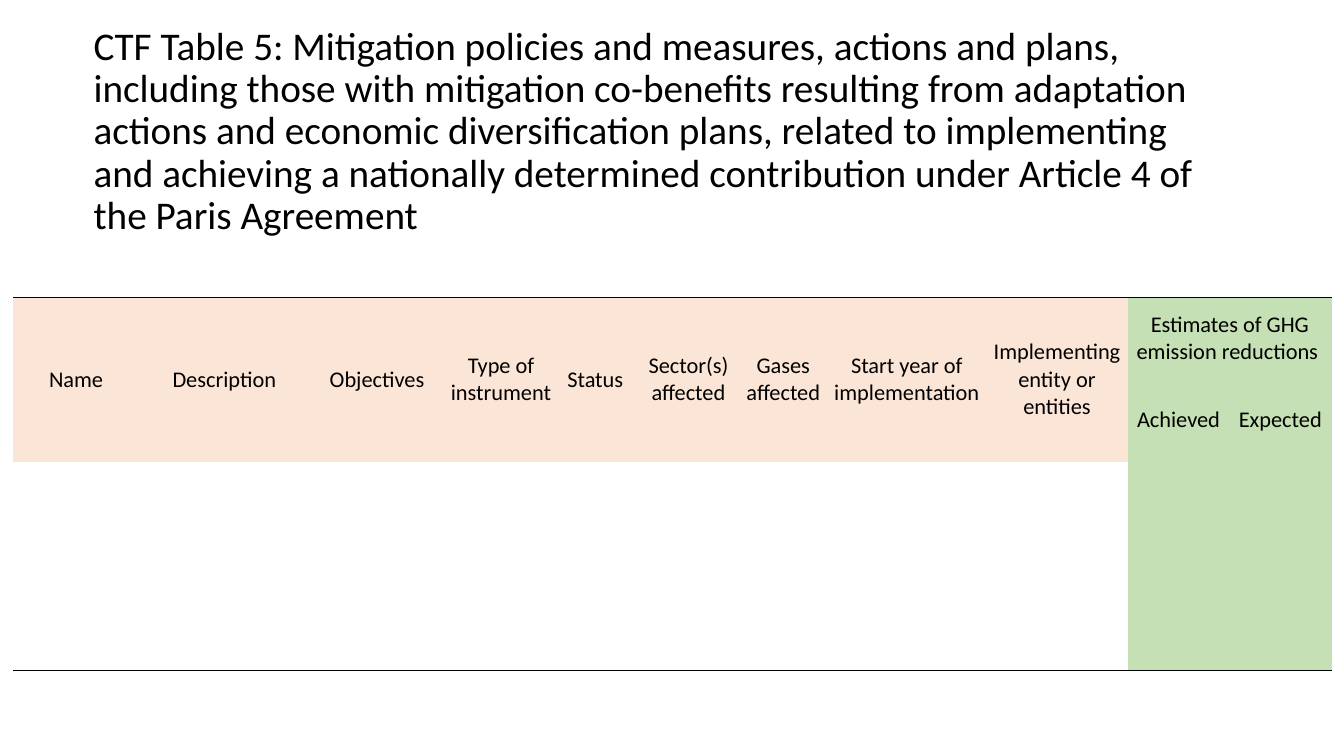
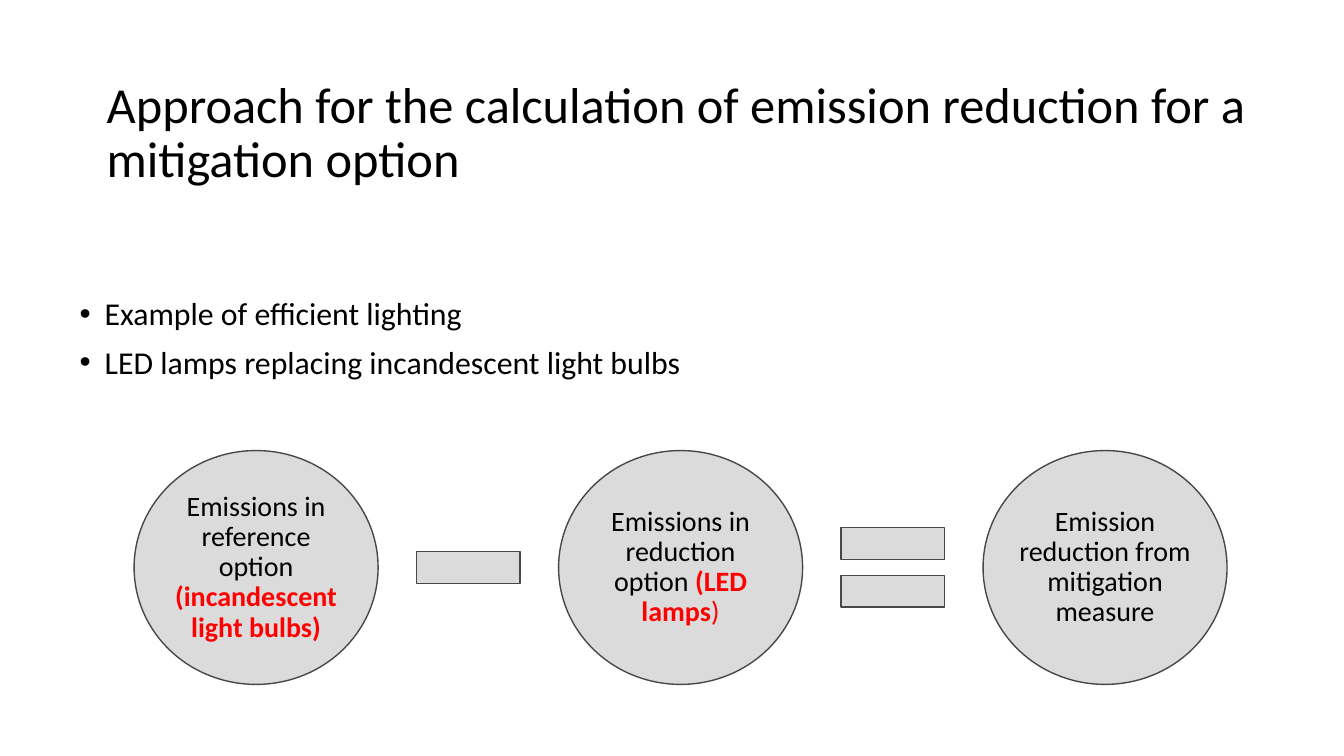
import dataclasses

import pptx
import pptx.dml.color
import pptx.enum.shapes
import pptx.enum.text
import pptx.oxml
import pptx.oxml.ns
import pptx.util

Inches = pptx.util.Inches
Pt = pptx.util.Pt
RGB = pptx.dml.color.RGBColor.from_string
SHAPE = pptx.enum.shapes.MSO_SHAPE
ANCHOR = pptx.enum.text.MSO_ANCHOR
ALIGN = pptx.enum.text.PP_ALIGN
NS = pptx.oxml.ns.nsdecls("a")


@dataclasses.dataclass(frozen=True)
class Theme:
    font: str = "Calibri"
    ink: str = "000000"
    accent: str = "FF0000"
    peach: str = "FBE5D6"
    green: str = "C5E0B4"
    shape_fill: str = "DBDBDB"
    shape_line: str = "484848"
    long_title: float = 28
    title: float = 36
    body: float = 22.7
    diagram: float = 20
    table: float = 16
    line_spacing: float = 0.9
    plain_table: str = "{2D5ABB26-0587-4C30-8999-92F81FD0307C}"


class Deck:
    def __init__(self, theme):
        self.theme = theme
        self.prs = pptx.Presentation()
        self.prs.slide_width, self.prs.slide_height = Inches(13.33), Inches(7.5)
        self.slide = None

    def new_slide(self):
        self.slide = self.prs.slides.add_slide(self.prs.slide_layouts[6])

    def style_run(self, r, size, color=None, bold=False):
        r.font.name, r.font.size, r.font.bold = self.theme.font, Pt(size), bold
        r.font.color.rgb = RGB(color or self.theme.ink)

    def text_box(self, box, lines, size, anchor=ANCHOR.TOP):
        sp = self.slide.shapes.add_textbox(*map(Inches, box))
        tf = sp.text_frame
        tf.word_wrap, tf.vertical_anchor = True, anchor
        tf.text = "\n".join(lines)
        for p in tf.paragraphs:
            p.line_spacing = self.theme.line_spacing
            self.style_run(p.runs[0], size)
        return tf

    def title(self, box, text, size, anchor):
        self.text_box(box, [text], size, anchor)

    def bullets(self, box, lines):
        for p in self.text_box(box, lines, self.theme.body).paragraphs:
            p.space_before = Pt(10)
            pPr = p._p.get_or_add_pPr()
            pPr.set("marL", str(Inches(0.25)))
            pPr.set("indent", str(Inches(-0.25)))
            pPr.append(pptx.oxml.parse_xml(f'<a:buFont {NS} typeface="Arial"/>'))
            pPr.append(pptx.oxml.parse_xml(f'<a:buChar {NS} char="•"/>'))

    def shape(self, kind, box, parts=()):
        """Draw a grey shape; parts are (text, colour, bold) runs."""
        t = self.theme
        sp = self.slide.shapes.add_shape(kind, *map(Inches, box))
        sp.shadow.inherit = False
        sp.fill.solid()
        sp.fill.fore_color.rgb = RGB(t.shape_fill)
        sp.line.color.rgb, sp.line.width = RGB(t.shape_line), Pt(1)
        tf = sp.text_frame
        tf.word_wrap, tf.vertical_anchor = True, ANCHOR.MIDDLE
        tf.margin_left = tf.margin_right = tf.margin_top = tf.margin_bottom = 0
        p = tf.paragraphs[0]
        p.alignment, p.line_spacing = ALIGN.CENTER, t.line_spacing
        for text, color, bold in parts:
            r = p.add_run()
            r.text = text
            self.style_run(r, t.diagram, color, bold)

    def table(self, left, top, widths, heights):
        frame = self.slide.shapes.add_table(
            len(heights), len(widths), Inches(left), Inches(top),
            Inches(sum(widths)), Inches(sum(heights)))
        table = frame.table
        table.first_row = table.horz_banding = False
        table._tbl.tblPr.find(pptx.oxml.ns.qn("a:tableStyleId")).text = self.theme.plain_table
        for column, width in zip(table.columns, widths):
            column.width = Inches(width)
        for row, height in zip(table.rows, heights):
            row.height = Inches(height)
        return table

    def cell_text(self, cell, text):
        cell.text_frame.text = text
        cell.vertical_anchor = ANCHOR.MIDDLE
        cell.margin_left = cell.margin_right = cell.margin_top = cell.margin_bottom = 0
        p = cell.text_frame.paragraphs[0]
        p.alignment = ALIGN.CENTER
        self.style_run(p.runs[0], self.theme.table)

    def cell_fill(self, cell, color):
        if color:
            cell.fill.solid()
            cell.fill.fore_color.rgb = RGB(color)
        else:
            cell.fill.background()

    def cell_rule(self, cell, side):
        cell._tc.get_or_add_tcPr().insert(0, pptx.oxml.parse_xml(
            f'<a:ln{side} {NS} w="{Pt(1)}"><a:solidFill>'
            f'<a:srgbClr val="{self.theme.ink}"/></a:solidFill></a:ln{side}>'))


def measures_slide(deck):
    t = deck.theme
    deck.new_slide()
    deck.title(
        (0.83, 0.72, 11.49, 1.18),
        "CTF Table 5: Mitigation policies and measures, actions and plans, including those "
        "with mitigation co-benefits resulting from adaptation actions and economic "
        "diversification plans, related to implementing and achieving a nationally "
        "determined contribution under Article 4 of the Paris Agreement",
        t.long_title, ANCHOR.MIDDLE)

    # Table grid, fills and outer rules
    headings = ["Name", "Description", "Objectives", "Type of instrument", "Status ",
                "Sector(s) affected", "Gases affected", "Start year of implementation",
                "Implementing entity or entities"]
    estimates = ["Achieved", "Expected"]
    first_estimate = len(headings)
    widths = [1.25, 1.69, 1.34, 1.12, 0.8, 1, 0.88, 1.57, 1.41, 1, 1.02]
    heights = [0.81, 0.82, 2.07]
    table = deck.table(0.13, 2.95, widths, heights)
    last_row = len(heights) - 1
    for row in range(len(heights)):
        for col in range(len(widths)):
            cell = table.cell(row, col)
            header_fill = t.peach if row < last_row else None
            deck.cell_fill(cell, t.green if col >= first_estimate else header_fill)
            if row == 0:
                deck.cell_rule(cell, "T")
            if row == last_row:
                deck.cell_rule(cell, "B")

    # Headings, with the estimates split in two
    for col, heading in enumerate(headings):
        table.cell(0, col).merge(table.cell(1, col))
        deck.cell_text(table.cell(0, col), heading)
    table.cell(0, first_estimate).merge(table.cell(0, first_estimate + 1))
    deck.cell_text(table.cell(0, first_estimate), "Estimates of GHG emission reductions ")
    for col, heading in enumerate(estimates, first_estimate):
        deck.cell_text(table.cell(1, col), heading)


def approach_slide(deck):
    t = deck.theme
    deck.new_slide()
    deck.title((0.96, 0, 12.29, 1.92),
               "Approach for the calculation of emission reduction for a mitigation option",
               t.title, ANCHOR.BOTTOM)
    deck.bullets((0.69, 2.91, 9.05, 3.88),
                 ["Example of efficient lighting",
                  "LED lamps replacing incandescent light bulbs"])

    # Equation: circles with an operator centred in each gap
    circles = [
        [("Emissions in reference option ", t.ink, False),
         ("(incandescent light bulbs)", t.accent, True)],
        [("Emissions in reduction option ", t.ink, False),
         ("(LED lamps", t.accent, True), (")", t.accent, False)],
        [("Emission reduction from mitigation measure", t.ink, False)],
    ]
    operators = [SHAPE.MATH_MINUS, SHAPE.MATH_EQUAL]
    left, pitch, middle = 1.33, 4.21, 5.63
    circle_w, circle_h, sign_w, sign_h = 2.42, 2.32, 1.4, 1.34
    for i, parts in enumerate(circles):
        deck.shape(SHAPE.OVAL, (left + i * pitch, middle - circle_h / 2, circle_w, circle_h), parts)
    sign_left = left + (circle_w + pitch - sign_w) / 2
    for i, kind in enumerate(operators):
        deck.shape(kind, (sign_left + i * pitch, middle - sign_h / 2, sign_w, sign_h))


def main():
    deck = Deck(Theme())
    measures_slide(deck)
    approach_slide(deck)
    deck.prs.save("out.pptx")


if __name__ == "__main__":
    main()
